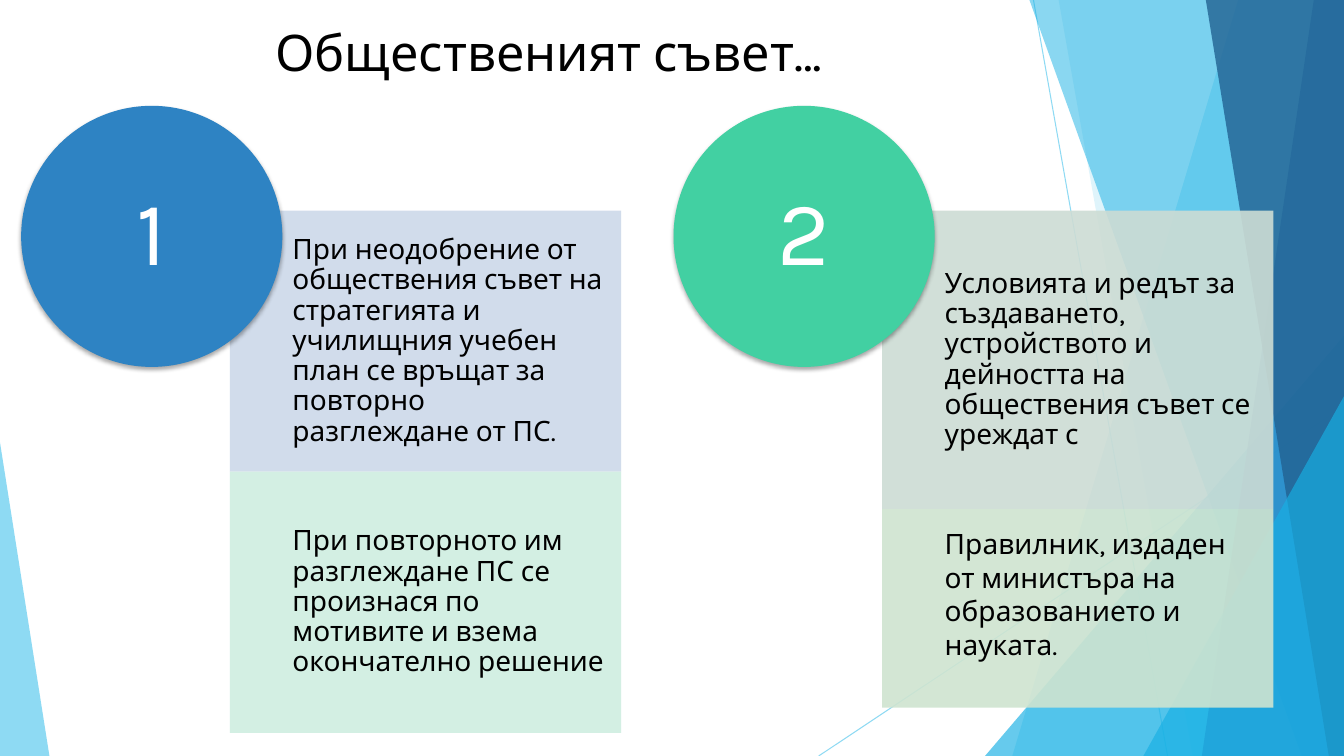
from lxml.etree import SubElement
from pptx import Presentation
from pptx.dml.color import RGBColor
from pptx.enum.shapes import MSO_CONNECTOR as Connector, MSO_SHAPE as Shape
from pptx.enum.text import MSO_ANCHOR as Anchor, MSO_AUTO_SIZE as AutoSize, PP_ALIGN as Align
from pptx.oxml.ns import qn
from pptx.util import Inches, Pt

FONT = "Karla"
WIDTH, HEIGHT = 13.33, 7.5
COLORS = {
    "sky": "5FCBEF", "cyan": "17B0E4", "blue": "2E83C3", "navy": "226292",
    "green": "42D0A2", "black": "000000", "white": "FFFFFF",
    "lavender": "CDD9E9", "mint": "CFEEE0", "sage": "CDDCD4", "lime": "CFE4D0",
}


def paint(shape, color, opacity=100):
    """Give a shape a flat fill without outline or theme shadow."""
    shape.shadow.inherit = False
    shape.fill.solid()
    shape.fill.fore_color.rgb = RGBColor.from_string(COLORS[color])
    if opacity < 100:
        tint = next(shape._element.spPr.iter(qn("a:srgbClr")))
        SubElement(tint, qn("a:alpha"), val=str(opacity * 1000))
    shape.line.fill.background()


def write(shape, text, size, color, align, spacing, insets=(0, 0, 0, 0)):
    frame = shape.text_frame
    frame.word_wrap = True
    frame.auto_size = AutoSize.NONE
    frame.vertical_anchor = Anchor.MIDDLE
    frame.margin_left, frame.margin_top, frame.margin_right, frame.margin_bottom = map(Inches, insets)
    para = frame.paragraphs[0]
    para.alignment = align
    para.line_spacing = spacing
    span = para.add_run()
    span.text = text
    span.font.name = FONT
    span.font.size = Pt(size)
    span.font.color.rgb = RGBColor.from_string(COLORS[color])


deck = Presentation()
deck.slide_width, deck.slide_height = Inches(WIDTH), Inches(HEIGHT)
page = deck.slides.add_slide(deck.slide_layouts.get_by_name("Title Only"))
shapes = page.shapes

# Background rays: thin lines, then translucent facets
for ends in [(10.25, 0, 11.58, HEIGHT), (WIDTH, 4.03, 8.12, HEIGHT)]:
    ray = shapes.add_connector(Connector.STRAIGHT, *map(Inches, ends))
    ray.line.width = Pt(0.75)
    ray.line.color.rgb = RGBColor.from_string(COLORS["sky"])
    tint = next(ray._element.spPr.iter(qn("a:srgbClr")))
    SubElement(tint, qn("a:alpha"), val="70000")
    SubElement(ray._element.spPr, qn("a:effectLst"))

# Bands give the top and bottom x of their left edge and reach the right border;
# triangles give left, top, width and the apex position.
facets = [
    ("band", (12.28, 10.04), "sky", 36),
    ("band", (10.5, 11.83), "sky", 20),
    ("triangle", (9.77, 3.33, 3.56, 1), "cyan", 66),
    ("band", (10.21, 12.91), "cyan", 50),
    ("band", (13.03, 11.92), "blue", 70),
    ("band", (11.96, 13.18), "navy", 80),
    ("triangle", (11.34, 3.93, 1.99, 1), "cyan", 66),
    ("triangle", (0, 4.39, 0.49, 0), "sky", 70),
]
for kind, geometry, color, opacity in facets:
    if kind == "band":
        top_x, bottom_x = geometry
        outline = shapes.build_freeform(Inches(top_x), 0)
        corners = [(WIDTH, 0), (WIDTH, HEIGHT), (bottom_x, HEIGHT)]
        outline.add_line_segments([(Inches(x), Inches(y)) for x, y in corners])
        facet = outline.convert_to_shape()
    else:
        left, top, width, apex = geometry
        box = map(Inches, (left, top, width, HEIGHT - top))
        facet = shapes.add_shape(Shape.ISOSCELES_TRIANGLE, *box)
        facet.adjustments[0] = apex
    paint(facet, color, opacity)

title = shapes.title
title.left, title.top, title.width, title.height = map(Inches, (0.74, 0.15, 9.4, 0.71))
write(title, "Общественият съвет…", 36, "black", Align.CENTER, 1)
shapes._spTree.append(title._element)

# Two numbered columns: stacked panels with a circle over their corner
COLUMN_LEFT, COLUMN_STEP = 0.21, 6.47
CIRCLE_TOP, CIRCLE_SIZE = 1.05, 2.59
PANEL_OFFSET, PANEL_TOP, PANEL_WIDTH = 2.07, 2.09, 3.88
PAD, TEXT_INDENT = 0.16, 0.62

# Each panel: text, height, colour, line spacing, bottom padding
columns = [
    ("blue", [
        ("При неодобрение от обществения съвет на стратегията и училищния учебен план "
         "се връщат за повторно разглеждане от ПС.", 2.59, "lavender", 0.9, PAD),
        ("При повторното им разглеждане ПС се произнася по мотивите и взема "
         "окончателно решение", 2.59, "mint", 0.9, PAD),
    ]),
    ("green", [
        ("Условията и редът за създаването, устройството и дейността на обществения "
         "съвет се уреждат с", 2.96, "sage", 0.9, PAD),
        ("Правилник, издаден от министъра на образованието и науката.",
         1.97, "lime", 1, 0.45),
    ]),
]
for index, (circle_color, panels) in enumerate(columns):
    left = COLUMN_LEFT + index * COLUMN_STEP
    top = PANEL_TOP
    for text, height, color, spacing, bottom in panels:
        box = map(Inches, (left + PANEL_OFFSET, top, PANEL_WIDTH, height))
        panel = shapes.add_shape(Shape.RECTANGLE, *box)
        paint(panel, color, 90)
        write(panel, text, 20, "black", Align.LEFT, spacing, (TEXT_INDENT, PAD, PAD, bottom))
        top += height

    box = map(Inches, (left, CIRCLE_TOP, CIRCLE_SIZE, CIRCLE_SIZE))
    circle = shapes.add_shape(Shape.OVAL, *box)
    paint(circle, circle_color)
    effects = circle._element.spPr.find(qn("a:effectLst"))
    shadow = SubElement(effects, qn("a:outerShdw"), blurRad=str(Pt(3)), dist=str(Pt(2)),
                        dir="5400000", rotWithShape="0")
    shade = SubElement(shadow, qn("a:srgbClr"), val=COLORS["black"])
    SubElement(shade, qn("a:alpha"), val="35000")
    write(circle, str(index + 1), 65, "white", Align.CENTER, 0.9)

deck.save("out.pptx")
